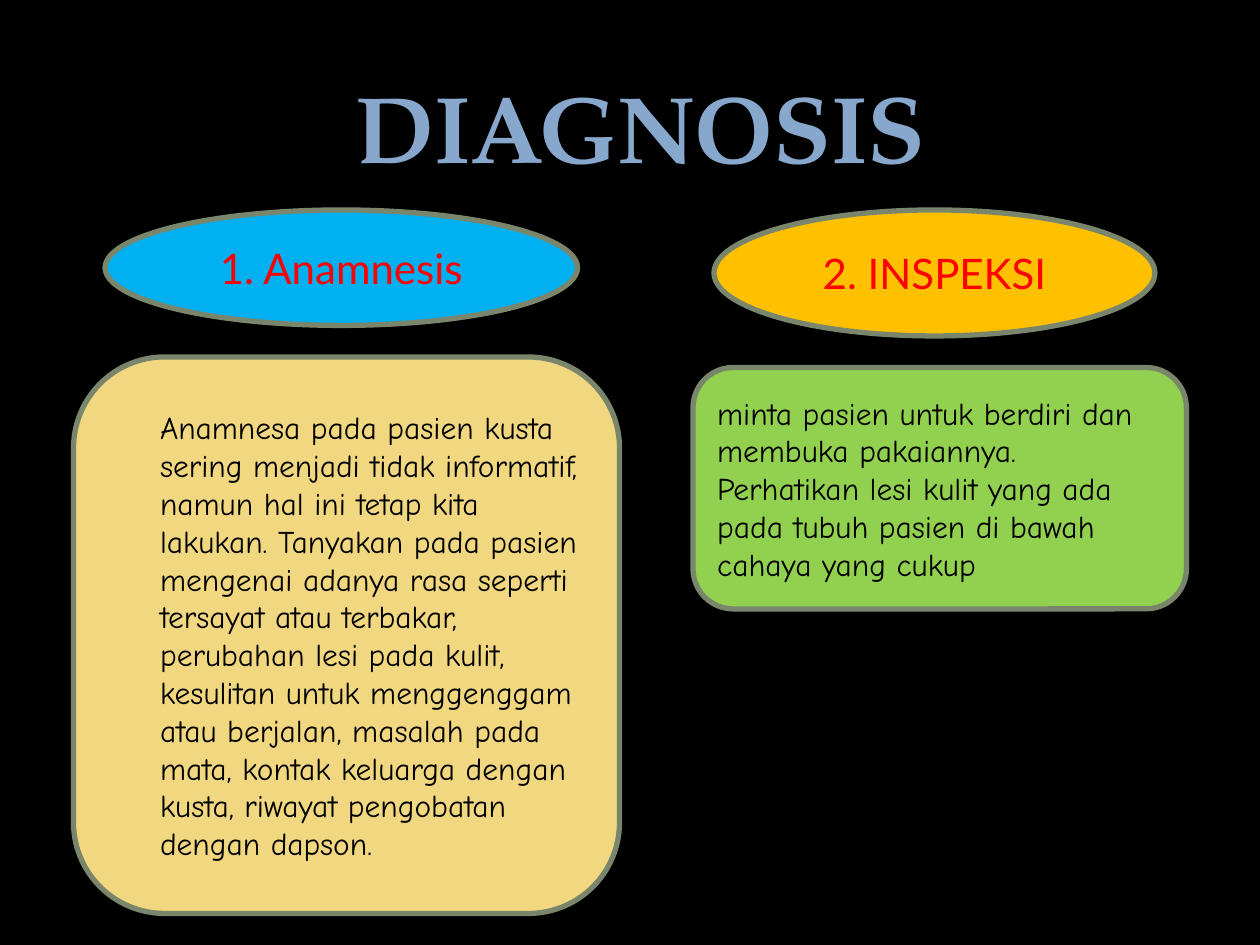
from pptx import Presentation
from pptx.dml.color import RGBColor
from pptx.enum import shapes, text
from pptx.util import Pt

OVAL = shapes.MSO_SHAPE.OVAL
ROUND = shapes.MSO_SHAPE.ROUNDED_RECTANGLE
MID = text.MSO_ANCHOR.MIDDLE
LEFT = text.PP_ALIGN.LEFT
CENTER = text.PP_ALIGN.CENTER

HEAD = {"name": "Lato", "size": Pt(24), "color": "FF0000"}
BODY = {"name": "Comic Neue", "size": Pt(18), "color": "000000"}
TITLE = {"name": "TeX Gyre Pagella", "size": Pt(54), "bold": True, "color": "88A7CD"}

STEPS = [
    {
        "oval": (60, 120, 270, 66), "tint": "00B0F0", "head": "1. Anamnesis",
        "card": (42, 204, 312, 318), "fill": "F1D77F", "indent": 27,
        "body": "Anamnesa pada pasien kusta sering menjadi tidak informatif, "
                "namun hal ini tetap kita lakukan. Tanyakan pada pasien mengenai "
                "adanya rasa seperti tersayat atau terbakar, perubahan lesi pada "
                "kulit, kesulitan untuk menggenggam atau berjalan, masalah pada "
                "mata, kontak keluarga dengan kusta, riwayat pengobatan dengan dapson.",
    },
    {
        "oval": (408, 120, 252, 72), "tint": "FFC000", "head": "2. INSPEKSI",
        "card": (396, 210, 282, 138), "fill": "92D050", "indent": 0,
        "body": "minta pasien untuk berdiri dan membuka pakaiannya. Perhatikan "
                "lesi kulit yang ada pada tubuh pasien di bawah cahaya yang cukup",
    },
]


def paint(target, color):
    target.solid()
    target.fore_color.rgb = RGBColor.from_string(color)


def write(frame, words, style, align):
    frame.word_wrap = True
    para = frame.paragraphs[0]
    para.alignment = align
    run = para.add_run()
    run.text = words
    for key, value in style.items():
        if key == "color":
            paint(run.font.fill, value)
        else:
            setattr(run.font, key, value)


def panel(slide, kind, box, fill, words, style, align, indent=0):
    shape = slide.shapes.add_shape(kind, *map(Pt, box))
    shape.shadow.inherit = False
    paint(shape.fill, fill)
    paint(shape.line.fill, "7A866C")
    shape.line.width = Pt(3)
    frame = shape.text_frame
    frame.vertical_anchor = MID
    frame.margin_left = Pt(7.2 + indent)
    write(frame, words, style, align)


def title(slide, box):
    label = slide.shapes.add_textbox(*map(Pt, box))
    write(label.text_frame, "DIAGNOSIS", TITLE, CENTER)


def step(slide, item):
    panel(slide, ROUND, item["card"], item["fill"], item["body"], BODY, LEFT, item["indent"])
    panel(slide, OVAL, item["oval"], item["tint"], item["head"], HEAD, CENTER)


def main():
    deck = Presentation()
    deck.slide_width, deck.slide_height = Pt(720), Pt(540)
    slide = deck.slides.add_slide(deck.slide_layouts[6])
    paint(slide.background.fill, "000000")
    title(slide, (168, 36, 396, 72.7))
    for item in STEPS:
        step(slide, item)
    deck.save("out.pptx")


if __name__ == "__main__":
    main()
